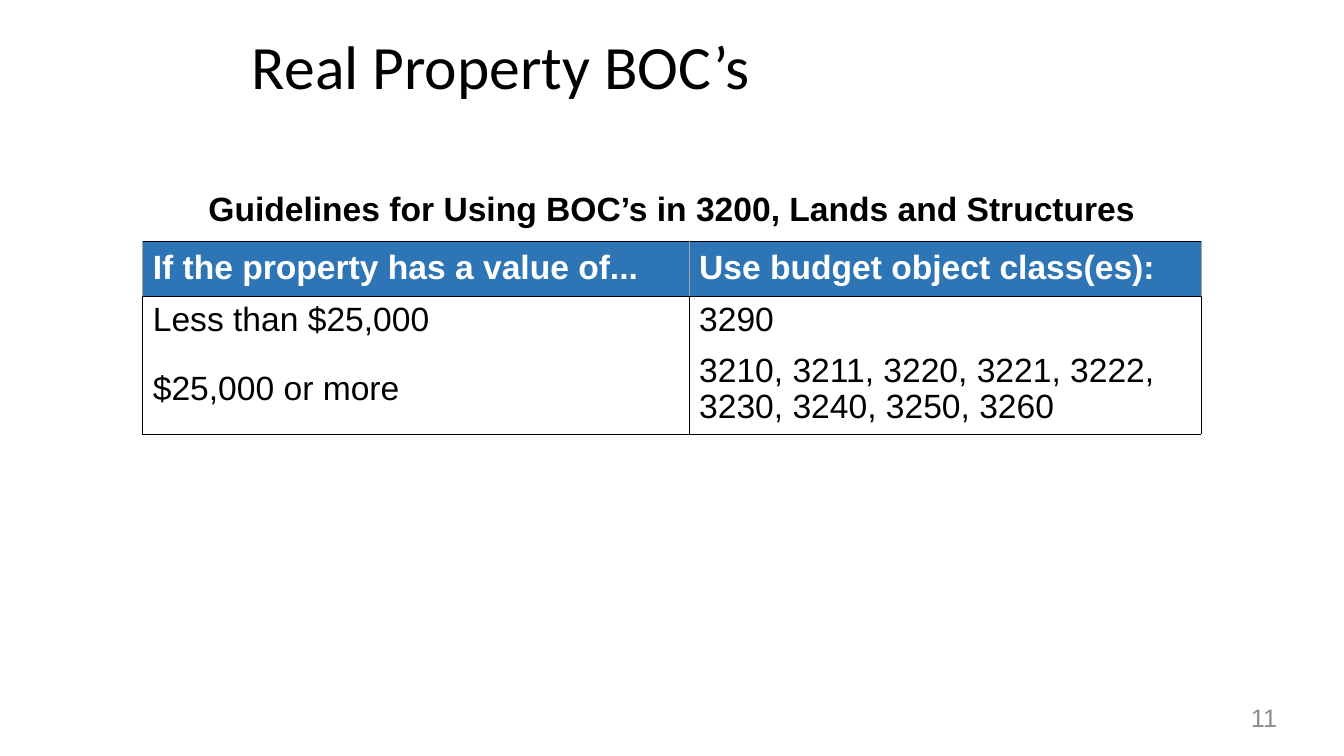
from lxml import etree
from pptx import Presentation
from pptx.dml.color import RGBColor
from pptx.enum.text import MSO_ANCHOR, PP_ALIGN
from pptx.oxml.ns import qn
from pptx.util import Pt

LEFT, CENTER, RIGHT = PP_ALIGN.LEFT, PP_ALIGN.CENTER, PP_ALIGN.RIGHT
MIDDLE = MSO_ANCHOR.MIDDLE

# Content: text, (left, top, width, height), style name, alignment
TEXTS = [
    ("Real Property BOC’s", (180, 20.16, 745.2, 54), "title", LEFT),
    ("Guidelines for Using BOC’s in 3200, Lands and Structures",
     (56.16, 133.92, 847.44, 28.08), "heading", CENTER),
    ("11", (691.2, 501.84, 221.04, 21.6), "number", RIGHT),
]
ROWS = [
    ("If the property has a value of...", "Use budget object class(es):"),
    ("Less than $25,000", "3290"),
    ("$25,000 or more", "3210, 3211, 3220, 3221, 3222, 3230, 3240, 3250, 3260"),
]
TABLE_LEFT, TABLE_TOP = 102, 172.08
COLUMN_WIDTHS = (390.24, 365.76)
ROW_HEIGHTS = (39.6, 33.84, 60.5)

# Styles: font, size, colour, bold
THEME = {
    "title": ("Calibri", 44, "000000", False),
    "heading": ("Arial", 24, "000000", True),
    "header": ("Arial", 24, "FFFFFF", True),
    "body": ("Arial", 24, "000000", False),
    "number": ("Arial", 18, "8C8C8C", False),
    "header_fill": "2E75B6",
    "body_fill": "FFFFFF",
    "header_side": "A1A1A1",
    "rule": "000000",
    "rule_width": 0.6,
}


def write(text_frame, text, style, alignment=LEFT):
    text_frame.text = text
    paragraph = text_frame.paragraphs[0]
    paragraph.alignment = alignment
    font = paragraph.runs[0].font
    name, size, colour, font.bold = THEME[style]
    font.name, font.size = name, Pt(size)
    font.color.rgb = RGBColor.from_string(colour)
    return paragraph


def set_border(cell, side, colour):
    properties = cell._tc.get_or_add_tcPr()
    line = etree.SubElement(properties, qn(f"a:ln{side}"), w=str(Pt(THEME["rule_width"])))
    if colour is None:
        etree.SubElement(line, qn("a:noFill"))
    else:
        fill = etree.SubElement(line, qn("a:solidFill"))
        etree.SubElement(fill, qn("a:srgbClr"), val=colour)


presentation = Presentation()
presentation.slide_width, presentation.slide_height = Pt(960), Pt(540)
slide = presentation.slides.add_slide(presentation.slide_layouts[6])

# Title, heading and page number
for text, box, style, alignment in TEXTS:
    text_frame = slide.shapes.add_textbox(*map(Pt, box)).text_frame
    text_frame.word_wrap = True
    text_frame.margin_left = text_frame.margin_right = 0
    text_frame.margin_top = text_frame.margin_bottom = 0
    write(text_frame, text, style, alignment)

# Table
table = slide.shapes.add_table(
    len(ROWS), len(COLUMN_WIDTHS), Pt(TABLE_LEFT), Pt(TABLE_TOP),
    Pt(sum(COLUMN_WIDTHS)), Pt(sum(ROW_HEIGHTS))).table
table.horz_banding = False
for column, width in zip(table.columns, COLUMN_WIDTHS):
    column.width = Pt(width)

for row_index, (texts, height) in enumerate(zip(ROWS, ROW_HEIGHTS)):
    table.rows[row_index].height = Pt(height)
    style = "header" if row_index == 0 else "body"
    side_colour = THEME["header_side"] if row_index == 0 else THEME["rule"]
    # The two body rows share one frame, with no rule between them
    top = THEME["rule"] if row_index < 2 else None
    bottom = THEME["rule"] if row_index != 1 else None
    for column_index, text in enumerate(texts):
        cell = table.cell(row_index, column_index)
        cell.vertical_anchor = MIDDLE
        write(cell.text_frame, text, style).line_spacing = 0.97
        for side, colour in zip("LRTB", (side_colour, side_colour, top, bottom)):
            set_border(cell, side, colour)
        cell.fill.solid()
        cell.fill.fore_color.rgb = RGBColor.from_string(THEME[f"{style}_fill"])

presentation.save("out.pptx")
